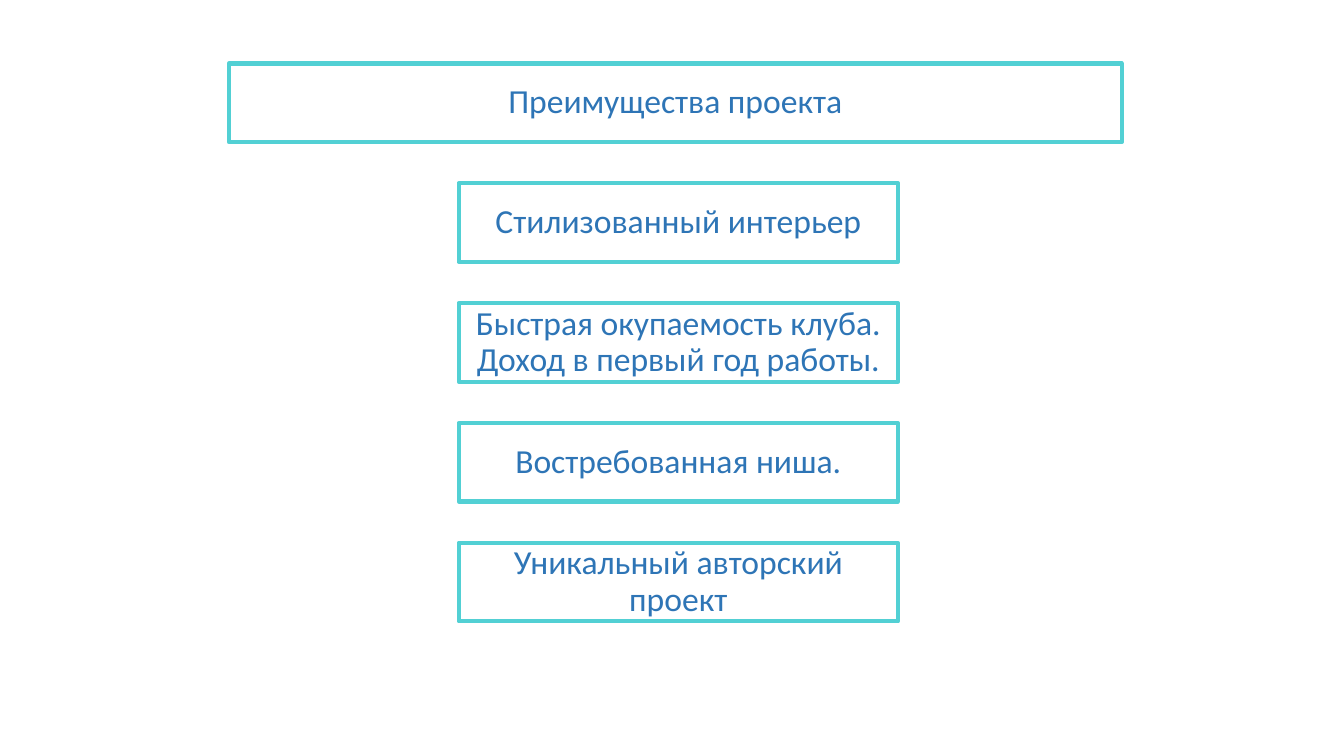
from dataclasses import dataclass

from pptx import Presentation
from pptx.dml.color import RGBColor
from pptx.enum.shapes import MSO_SHAPE
from pptx.enum.text import MSO_ANCHOR, PP_ALIGN
from pptx.util import Cm, Pt

RECT = MSO_SHAPE.RECTANGLE
MIDDLE = MSO_ANCHOR.MIDDLE
CENTER = PP_ALIGN.CENTER


@dataclass(frozen=True)
class Theme:
    fill: RGBColor = RGBColor(0xFF, 0xFF, 0xFF)
    line: RGBColor = RGBColor(0x52, 0xD0, 0xD4)
    text: RGBColor = RGBColor(0x2E, 0x75, 0xB6)
    font: str = "Calibri"
    size: Pt = Pt(24)
    border: Pt = Pt(3)


THEME = Theme()
TITLE = "Преимущества проекта"
POINTS = [
    "Стилизованный интерьер",
    "Быстрая окупаемость клуба. Доход в первый год работы.",
    "Востребованная ниша.",
    "Уникальный авторский проект",
]
HEIGHT = Cm(1.98)
PITCH = Cm(3.02)


# One framed box with centred text
def add_box(slide, text, left, top, width):
    box = slide.shapes.add_shape(RECT, left, top, width, HEIGHT)
    box.shadow.inherit = False
    box.fill.solid()
    box.fill.fore_color.rgb = THEME.fill
    box.line.color.rgb = THEME.line
    box.line.width = THEME.border

    frame = box.text_frame
    frame.word_wrap = True
    frame.vertical_anchor = MIDDLE
    para = frame.paragraphs[0]
    para.alignment = CENTER
    para.line_spacing = 0.9
    run = para.add_run()
    run.text = text
    run.font.name = THEME.font
    run.font.size = THEME.size
    run.font.color.rgb = THEME.text


# Column of boxes, one for each point
def add_list(slide, points, left, top, width):
    for row, point in enumerate(points):
        add_box(slide, point, left, top + row * PITCH, width)


def main():
    deck = Presentation()
    deck.slide_width = Cm(33.87)
    deck.slide_height = Cm(19.05)
    slide = deck.slides.add_slide(deck.slide_layouts[6])

    top = Cm(1.6)
    add_box(slide, TITLE, Cm(5.77), top, Cm(22.5))
    add_list(slide, POINTS, Cm(11.56), top + PITCH, Cm(11.07))
    deck.save("out.pptx")


if __name__ == "__main__":
    main()
